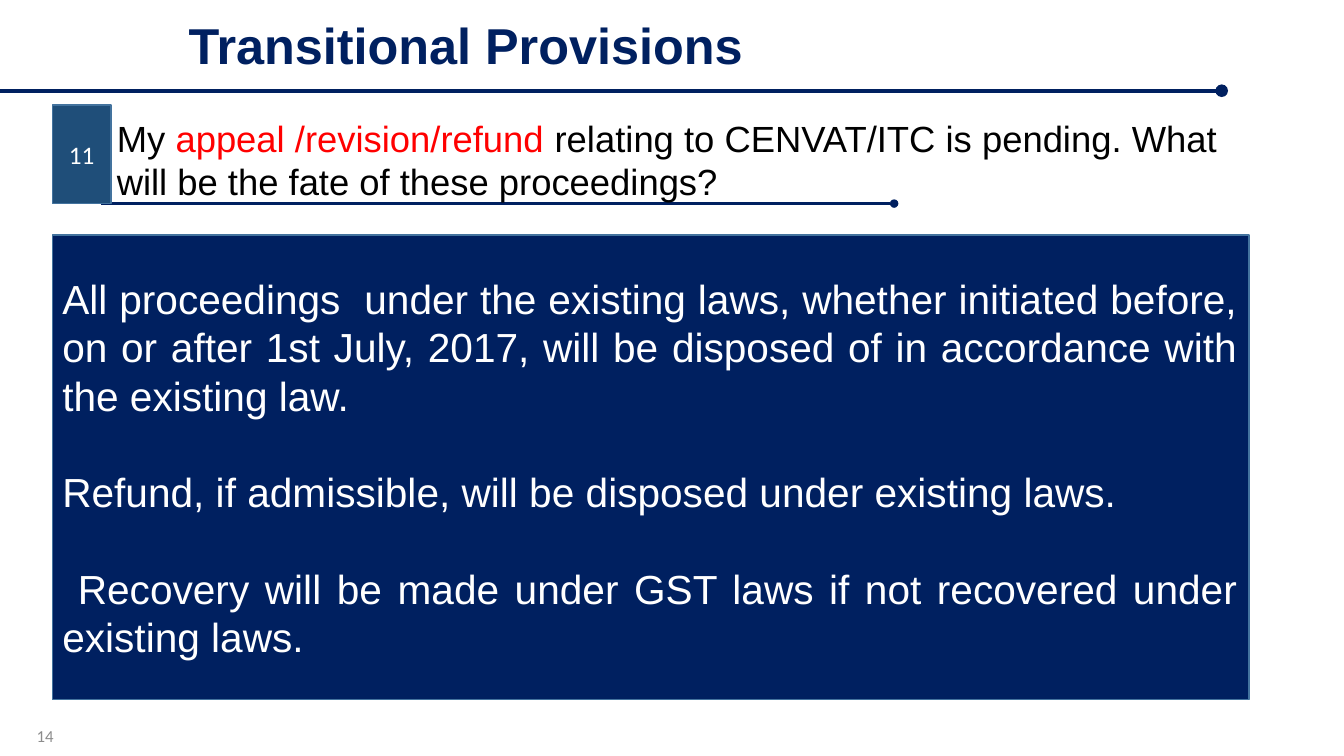
from lxml import etree
from pptx import Presentation
from pptx.dml.color import RGBColor
from pptx.enum.shapes import MSO_CONNECTOR, MSO_SHAPE
from pptx.enum.text import MSO_ANCHOR, MSO_AUTO_SIZE, PP_ALIGN
from pptx.oxml.ns import qn
from pptx.util import Inches, Pt

LEFT, CENTER, RIGHT, JUSTIFY = PP_ALIGN.LEFT, PP_ALIGN.CENTER, PP_ALIGN.RIGHT, PP_ALIGN.JUSTIFY
TOP, MIDDLE = MSO_ANCHOR.TOP, MSO_ANCHOR.MIDDLE
RECTANGLE, STRAIGHT = MSO_SHAPE.RECTANGLE, MSO_CONNECTOR.STRAIGHT
NO_AUTOFIT = MSO_AUTO_SIZE.NONE
TITLE_ONLY = 5

WIDTH, HEIGHT = Inches(13.33), Inches(7.5)
NAVY, STEEL, EDGE = "002060", "1F4E79", "43739E"
WHITE, BLACK, RED, GREY = "FFFFFF", "000000", "FF0000", "8C8C8C"

ANSWERS = [
    "All proceedings  under the existing laws, whether initiated before, on or after "
    "1st July, 2017, will be disposed of in accordance with the existing law.",
    "Refund, if admissible, will be disposed under existing laws.",
    " Recovery will be made under GST laws if not recovered under existing laws.",
]


def color(hex_value):
    return RGBColor.from_string(hex_value)


def share(*percents):
    """Turn alternating x and y percentages of the slide into lengths."""
    return [int((HEIGHT if i % 2 else WIDTH) * p / 100) for i, p in enumerate(percents)]


def write(box, paragraphs, size, font="Arial", bold=False, align=LEFT, anchor=TOP, gap=0):
    """Fill a box with paragraphs, each a list of (text, colour) spans."""
    frame = box.text_frame
    frame_format = {"word_wrap": True, "auto_size": NO_AUTOFIT, "vertical_anchor": anchor}
    for name, value in frame_format.items():
        setattr(frame, name, value)
    for index, spans in enumerate(paragraphs):
        para = frame.add_paragraph() if index else frame.paragraphs[0]
        para.alignment = align
        para.space_before = Pt(gap if index else 0)
        for text, hex_value in spans:
            span = para.add_run()
            span.text = text
            for name, value in {"name": font, "size": Pt(size), "bold": bold}.items():
                setattr(span.font, name, value)
            span.font.color.rgb = color(hex_value)


def add_title(page, text, area):
    title = page.shapes.title
    for name, value in zip(("left", "top", "width", "height"), share(*area)):
        setattr(title, name, value)
    write(title, [[(text, NAVY)]], 36, bold=True)


def add_text(page, area, paragraphs, size, **text_format):
    write(page.shapes.add_textbox(*share(*area)), paragraphs, size, **text_format)


def add_panel(page, area, fill, paragraphs, size, **text_format):
    panel = page.shapes.add_shape(RECTANGLE, *share(*area))
    panel.shadow.inherit = False
    panel.fill.solid()
    panel.fill.fore_color.rgb = color(fill)
    panel.line.color.rgb = color(EDGE)
    panel.line.width = Pt(1)
    write(panel, paragraphs, size, anchor=MIDDLE, **text_format)


def add_rule(page, start, end, row, weight):
    """Draw a horizontal line that ends in a dot."""
    rule = page.shapes.add_connector(STRAIGHT, *share(start, row, end, row))
    rule.line.color.rgb = color(NAVY)
    rule.line.width = Pt(weight)
    etree.SubElement(rule.line._get_or_add_ln(), qn("a:tailEnd"), type="oval")
    etree.SubElement(rule._element.spPr, qn("a:effectLst"))


def main():
    deck = Presentation()
    deck.slide_width, deck.slide_height = WIDTH, HEIGHT
    page = deck.slides.add_slide(deck.slide_layouts[TITLE_ONLY])

    add_rule(page, 0, 90.9, 12, 3)
    add_title(page, "Transitional Provisions", (13.28, 1.2, 62.33, 9.47))

    add_rule(page, 7.5, 66.53, 26.93, 2)
    add_panel(page, (3.9, 13.87, 4.35, 13.07), STEEL, [[("11", WHITE)]], 18,
              font="Calibri", align=CENTER)
    question = [
        ("My ", BLACK),
        ("appeal /revision/refund ", RED),
        ("relating to CENVAT/ITC is pending. What will be the fate of these proceedings?", BLACK),
    ]
    add_text(page, (7.95, 14.67, 86.18, 13.07), [question], 26)

    add_panel(page, (3.9, 31.07, 89.03, 61.47), NAVY,
              [[(answer, WHITE)] for answer in ANSWERS], 29, align=JUSTIFY, gap=34)
    add_text(page, (0, 94.67, 4.73, 5.33), [[("14", GREY)]], 12,
             font="Calibri", align=RIGHT, anchor=MIDDLE)
    deck.save("out.pptx")


if __name__ == "__main__":
    main()
